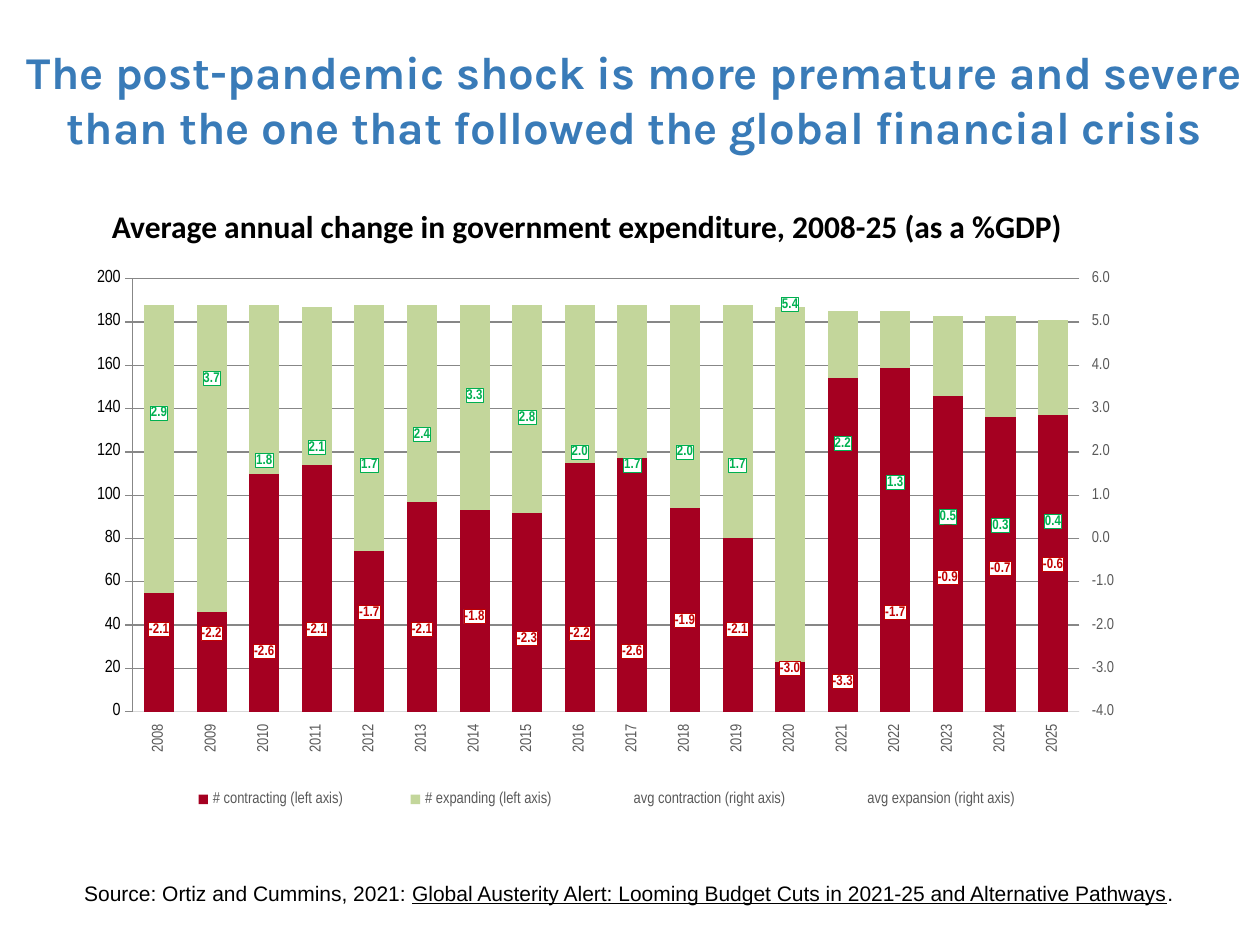
from lxml.etree import SubElement
from pptx import Presentation
from pptx.chart.axis import ValueAxis
from pptx.chart.data import CategoryChartData
from pptx.dml.color import RGBColor
from pptx.enum.chart import (XL_CHART_TYPE, XL_LABEL_POSITION, XL_LEGEND_POSITION,
                             XL_MARKER_STYLE, XL_TICK_LABEL_POSITION, XL_TICK_MARK)
from pptx.enum.text import MSO_ANCHOR, PP_ALIGN
from pptx.oxml import parse_xml
from pptx.oxml.ns import nsdecls, qn
from pptx.util import Inches, Pt


def style(font, name, size, color, bold=False):
    font.name, font.size, font.bold = name, Pt(size), bold
    font.color.rgb = RGBColor.from_string(color)


def add_text(box, parts, name, size, color, bold=False):
    shape = slide.shapes.add_textbox(*[Inches(v) for v in box])
    frame = shape.text_frame
    frame.word_wrap = True
    para = frame.paragraphs[0]
    for part in parts:
        para.add_run().text = part
    style(para.font, name, size, color, bold)
    return frame


prs = Presentation()
prs.slide_width, prs.slide_height = Inches(10), Inches(7.5)
slide = prs.slides.add_slide(prs.slide_layouts[6])

# Title, source and chart heading
title = add_text((0.08, 0.44, 9.92, 0.69),
                 ["The post-pandemic shock is more premature and severe "
                  "than the one that followed the global financial crisis"],
                 "Karla", 26, "397BB8", True)
title.vertical_anchor = MSO_ANCHOR.MIDDLE
title.paragraphs[0].alignment = PP_ALIGN.CENTER
source = add_text((0.57, 6.94, 8.86, 0.3),
                  ["Source: Ortiz and Cummins, 2021: ",
                   "Global Austerity Alert: Looming Budget Cuts in 2021-25 "
                   "and Alternative Pathways", "."],
                  "Arial", 12, "000000")
source.paragraphs[0].runs[1].font.underline = True
add_text((0.79, 1.59, 9.16, 0.4),
         ["Average annual change in government expenditure, 2008-25 (as a %GDP)"],
         "Calibri", 18, "000000", True)

# Chart data
data = CategoryChartData()
data.categories = [str(year) for year in range(2008, 2026)]
data.add_series("# contracting (left axis)",
                [55, 46, 110, 114, 74, 97, 93, 92, 115, 117, 94, 80, 23,
                 154, 159, 146, 136, 137])
data.add_series("# expanding (left axis)",
                [133, 142, 78, 73, 114, 91, 95, 96, 73, 71, 94, 108, 164,
                 31, 26, 37, 47, 44])
data.add_series("avg contraction (right axis)",
                [-2.1, -2.2, -2.6, -2.1, -1.7, -2.1, -1.8, -2.3, -2.2, -2.6,
                 -1.9, -2.1, -3, -3.3, -1.7, -0.9, -0.7, -0.6])
data.add_series("avg expansion (right axis)",
                [2.9, 3.7, 1.8, 2.1, 1.7, 2.4, 3.3, 2.8, 2, 1.7,
                 2, 1.7, 5.4, 2.2, 1.3, 0.5, 0.3, 0.4])
chart = slide.shapes.add_chart(XL_CHART_TYPE.COLUMN_STACKED, Inches(0.57), Inches(1.98),
                               Inches(8.49), Inches(4.57), data).chart
chart.has_title = False
style(chart.font, "Arial Narrow", 10, "000000")

# Move the averages to a line plot on a second pair of axes
area = chart.element.xpath(".//c:plotArea")[0]
bars = area.find(qn("c:barChart"))
line = parse_xml(f'<c:lineChart {nsdecls("c")}><c:grouping val="standard"/>'
                 '<c:varyColors val="0"/><c:marker val="1"/>'
                 '<c:axId val="501"/><c:axId val="502"/></c:lineChart>')
for spot, ser in enumerate(bars.findall(qn("c:ser"))[2:], 2):
    for flag in ser.findall(qn("c:invertIfNegative")):
        ser.remove(flag)
    line.insert(spot, ser)
bars.addnext(line)
last = area.find(qn("c:valAx"))
for tag, own, other, gone, side, cross in (("catAx", 501, 502, 1, "b", "autoZero"),
                                           ("valAx", 502, 501, 0, "r", "max")):
    axis = parse_xml(f'<c:{tag} {nsdecls("c")}><c:axId val="{own}"/>'
                     '<c:scaling><c:orientation val="minMax"/></c:scaling>'
                     f'<c:delete val="{gone}"/><c:axPos val="{side}"/>'
                     f'<c:crossAx val="{other}"/><c:crosses val="{cross}"/></c:{tag}>')
    last.addnext(axis)
    last = axis

# Axes
years, left, right = chart.category_axis, chart.value_axis, ValueAxis(last)
for axis in (years, left, right):
    axis.major_tick_mark = axis.minor_tick_mark = XL_TICK_MARK.NONE
    style(axis.tick_labels.font, "Arial Narrow", 9, "595959")
    axis.format.line.fill.background()
right.major_tick_mark = XL_TICK_MARK.OUTSIDE
years.tick_label_position = XL_TICK_LABEL_POSITION.LOW
years.format.line.color.rgb = RGBColor.from_string("D9D9D9")
years.format.line.width = Pt(0.75)
area.xpath("./c:catAx/c:txPr/a:bodyPr")[0].set("rot", "-5400000")
for axis, low, high, step, form in ((left, 0, 200, 20, "0"),
                                    (right, -4, 6, 1, "#,##0.0")):
    axis.minimum_scale, axis.maximum_scale, axis.major_unit = low, high, step
    axis.tick_labels.number_format = form
    axis.tick_labels.number_format_is_linked = False
right.has_major_gridlines = False
grid = left.major_gridlines.format.line
grid.color.rgb = RGBColor.from_string("D9D9D9")
grid.width = Pt(0.25)

# Columns
cols, means = chart.plots
cols.gap_width, cols.overlap, cols.vary_by_categories = 75, 100, False
for ser, color in zip(cols.series, ("A50021", "C3D69B")):
    ser.format.fill.solid()
    ser.format.fill.fore_color.rgb = RGBColor.from_string(color)

# Averages show only as boxed labels
for ser, color in zip(means.series, ("C00000", "00B050")):
    ser.format.line.fill.background()
    ser.marker.style = XL_MARKER_STYLE.NONE
    ser.smooth = False
    tags = ser.data_labels
    tags.show_value = True
    tags.number_format, tags.number_format_is_linked = "0.0", False
    tags.position = XL_LABEL_POSITION.CENTER
    style(tags.font, "Arial Narrow", 8, color, True)
    ser._element.find(qn("c:dLbls")).find(qn("c:numFmt")).addnext(parse_xml(
        f'<c:spPr {nsdecls("c", "a")}>'
        '<a:solidFill><a:srgbClr val="FFFFFF"/></a:solidFill>'
        f'<a:ln w="6350"><a:solidFill><a:srgbClr val="{color}"/></a:solidFill></a:ln>'
        '</c:spPr>'))

# Legend
chart.has_legend = True
legend = chart.legend
legend.position = XL_LEGEND_POSITION.BOTTOM
legend.include_in_layout = False
style(legend.font, "Arial Narrow", 9, "595959")

# Fixed places for the plot area and the legend
for old in area.findall(qn("c:layout")):
    area.remove(old)
spot = parse_xml(f'<c:layout {nsdecls("c")}/>')
area.insert(0, spot)
key = parse_xml(f'<c:layout {nsdecls("c")}/>')
home = chart.element.xpath(".//c:legend")[0]
for old in home.findall(qn("c:layout")):
    home.remove(old)
home.find(qn("c:legendPos")).addnext(key)
for place, box in ((spot, (0.057, 0.051, 0.885, 0.752)), (key, (0.06, 0.92, 0.88, 0.07))):
    manual = SubElement(place, qn("c:manualLayout"))
    if place is spot:
        SubElement(manual, qn("c:layoutTarget")).set("val", "inner")
    for name in ("xMode", "yMode"):
        SubElement(manual, qn("c:" + name)).set("val", "edge")
    for name, value in zip("xywh", box):
        SubElement(manual, qn("c:" + name)).set("val", str(value))

prs.save("out.pptx")
